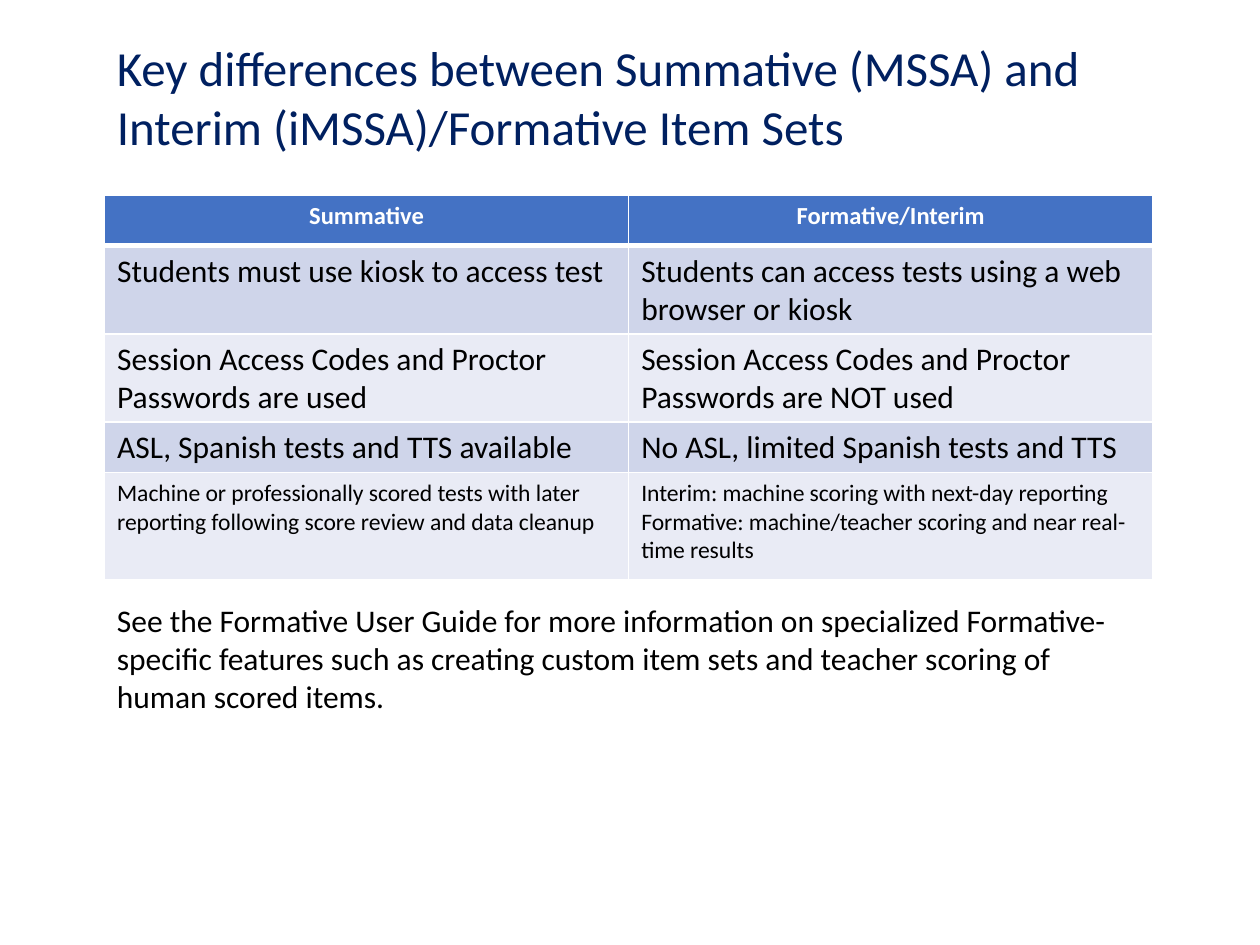
from lxml.etree import SubElement
from pptx import Presentation
from pptx.dml.color import RGBColor as RGB
from pptx.enum.text import MSO_AUTO_SIZE as AutoSize, PP_ALIGN as Align
from pptx.oxml.ns import qn
from pptx.util import Inches, Pt

FONT = "Calibri"
COLORS = {
    "title": "002060",
    "body": "000000",
    "white": "FFFFFF",
    "header": "4472C4",
    "odd_row": "CFD5EA",
    "even_row": "E9EBF5",
}
LEFT = 0.83
COLUMN_WIDTH = 4.16
ROW_HEIGHTS = [0.4, 0.7, 0.7, 0.4, 0.85]
HEADER_SIZE, BODY_SIZE, SCORING_SIZE = 14, 18, 13.5

COMPARISON = [
    ("Summative", "Formative/Interim"),
    ("Students must use kiosk to access test",
     "Students can access tests using a web browser or kiosk"),
    ("Session Access Codes and Proctor Passwords are used",
     "Session Access Codes and Proctor Passwords are NOT used"),
    ("ASL, Spanish tests and TTS available",
     "No ASL, limited Spanish tests and TTS"),
    ("Machine or professionally scored tests with later reporting "
     "following score review and data cleanup",
     "Interim: machine scoring with next-day reporting\n"
     "Formative: machine/teacher scoring and near real-time results"),
]


def write(frame, text, size, color, bold=False, align=Align.LEFT):
    frame.text = text
    frame.word_wrap = True
    for paragraph in frame.paragraphs:
        paragraph.alignment = align
        for run in paragraph.runs:
            run.font.name = FONT
            run.font.size = Pt(size)
            run.font.bold = bold
            run.font.color.rgb = RGB.from_string(COLORS[color])


def add_text(slide, text, top, width, height, size, color):
    box = slide.shapes.add_textbox(*map(Inches, (LEFT, top, width, height)))
    write(box.text_frame, text, size, color)
    box.text_frame.auto_size = AutoSize.SHAPE_TO_FIT_TEXT


def add_borders(cell, widths):
    """Draw white cell edges; widths maps each side to points."""
    properties = cell._tc.get_or_add_tcPr()
    for side in "LRTB":
        line = SubElement(properties, qn(f"a:ln{side}"), w=str(Pt(widths[side])))
        fill = SubElement(line, qn("a:solidFill"))
        SubElement(fill, qn("a:srgbClr"), val=COLORS["white"])


def style_cell(cell, text, row):
    is_header = row == 0
    edges = dict.fromkeys("LRTB", 1)
    if is_header:
        edges["B"] = 3
    elif row == 1:
        edges["T"] = 3
    add_borders(cell, edges)  # edges come before the fill in the cell
    fill = "header" if is_header else "odd_row" if row % 2 else "even_row"
    cell.fill.solid()
    cell.fill.fore_color.rgb = RGB.from_string(COLORS[fill])

    if is_header:
        write(cell.text_frame, text, HEADER_SIZE, "white", True, Align.CENTER)
    else:
        is_scoring = row == len(COMPARISON) - 1
        write(cell.text_frame, text, SCORING_SIZE if is_scoring else BODY_SIZE, "body")


def add_comparison(slide, top):
    columns = len(COMPARISON[0])
    area = (LEFT, top, columns * COLUMN_WIDTH, sum(ROW_HEIGHTS))
    table = slide.shapes.add_table(
        len(COMPARISON), columns, *map(Inches, area)).table
    for column in table.columns:
        column.width = Inches(COLUMN_WIDTH)
    for row, (texts, height) in enumerate(zip(COMPARISON, ROW_HEIGHTS)):
        table.rows[row].height = Inches(height)
        for column, text in enumerate(texts):
            style_cell(table.cell(row, column), text, row)


def main():
    deck = Presentation()
    deck.slide_width, deck.slide_height = Inches(10), Inches(7.5)
    slide = deck.slides.add_slide(deck.slide_layouts[6])

    # Title
    add_text(slide, "Key differences between Summative (MSSA) and "
             "Interim (iMSSA)/Formative Item Sets", 0.25, 8, 1.04, 28, "title")
    # Comparison table
    add_comparison(slide, 1.55)
    # Closing pointer to the guide
    add_text(slide, "See the Formative User Guide for more information on "
             "specialized Formative-specific features such as creating custom "
             "item sets and teacher scoring of human scored items.",
             4.72, 8.2, 1.01, BODY_SIZE, "body")

    deck.save("out.pptx")


if __name__ == "__main__":
    main()
